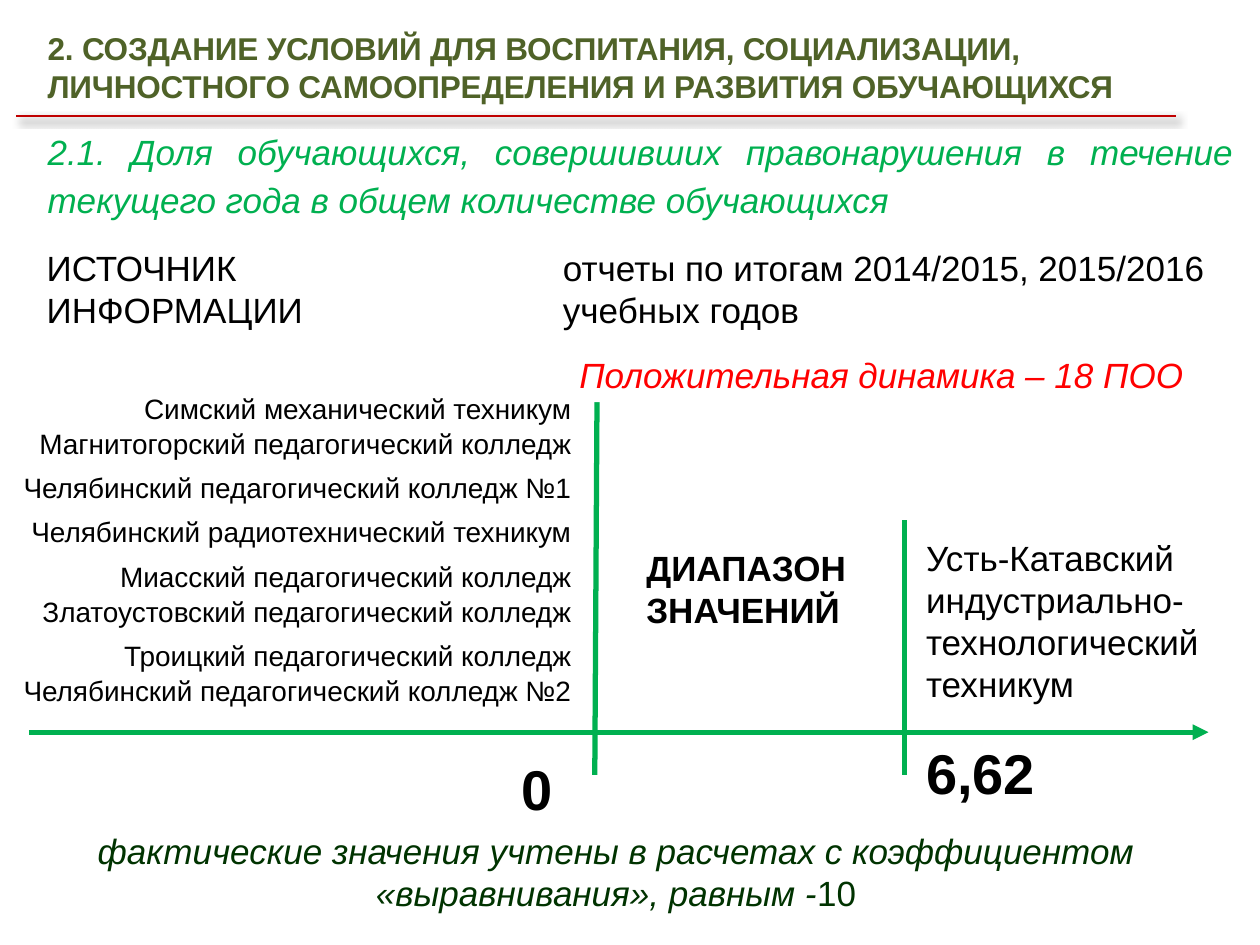
from dataclasses import dataclass

import pptx
import pptx.dml.color
import pptx.enum.shapes
import pptx.enum.text
import pptx.oxml
import pptx.oxml.ns
import pptx.util
from pptx.util import Cm

FONT = "Arial"
BLACK, GREEN, RED = "000000", "00B050", "FF0000"
DEEP_RED, OLIVE, DARK_GREEN, WHITE = "C00000", "4F6228", "003300", "FFFFFF"
ALIGN = pptx.enum.text.PP_ALIGN
DRAWING_NS = pptx.oxml.ns.nsdecls("a")

SHORT_ROW, TALL_ROW = 0.46, 0.89
AXIS_Y, TICK_BOTTOM = 14.76, 15.62
MAXIMUM_TEXT_LEFT = 18.42


@dataclass
class Label:
    """A text with its box in centimetres."""
    text: str
    left: float
    top: float
    width: float
    height: float
    size: int = 20
    color: str = BLACK
    bold: bool = False
    italic: bool = False
    align: ALIGN = ALIGN.LEFT
    wrap: bool = True
    line_spacing: float = 1.0
    fill: str = ""


@dataclass
class Line:
    """A straight line with its ends in centimetres."""
    start_x: float
    start_y: float
    end_x: float
    end_y: float
    color: str = GREEN
    width: float = 3
    arrow: bool = False
    shadow: bool = False


@dataclass
class College:
    name: str
    row_height: float = TALL_ROW


TITLE = Label(
    "2. СОЗДАНИЕ УСЛОВИЙ ДЛЯ ВОСПИТАНИЯ, СОЦИАЛИЗАЦИИ, "
    "ЛИЧНОСТНОГО САМООПРЕДЕЛЕНИЯ И РАЗВИТИЯ ОБУЧАЮЩИХСЯ",
    0.71, 0.46, 22.81, 1.8, size=18, color=OLIVE, bold=True)
NOTE = Label(
    "фактические значения учтены в расчетах с коэффициентом "
    "«выравнивания», равным -",
    -0.28, 16.59, 25.4, 1.96, color=DARK_GREEN, italic=True, align=ALIGN.CENTER)
LABELS = [
    Label("2.1. Доля обучающихся, совершивших правонарушения в течение "
          "текущего года в общем количестве обучающихся",
          0.71, 2.38, 24.41, 2.27, color=GREEN, italic=True,
          align=ALIGN.JUSTIFY, line_spacing=1.15),
    Label("отчеты по итогам 2014/2015, 2015/2016 учебных годов",
          11.1, 4.85, 13.59, 1.96),
    Label("ИСТОЧНИК ИНФОРМАЦИИ", 0.69, 4.85, 6.32, 1.96),
    Label("0", 10.26, 15.09, 1.14, 1.63, size=32, bold=True, wrap=False),
    Label("Усть-Катавский индустриально-технологический техникум",
          MAXIMUM_TEXT_LEFT, 10.69, 6.15, 3.68),
    Label("6,62", MAXIMUM_TEXT_LEFT, AXIS_Y, 2.72, 1.63, size=32, bold=True,
          wrap=False),
    Label("ДИАПАЗОН ЗНАЧЕНИЙ", 12.78, 10.9, 5.46, 1.96, bold=True),
]
DYNAMICS = Label("Положительная динамика – 18 ПОО", 11.05, 6.99, 13.44, 1.12,
                 color=RED, italic=True, align=ALIGN.CENTER, fill=WHITE)

TITLE_RULE = Line(0.33, 2.34, 23.7, 2.34, DEEP_RED, 1.5, shadow=True)
SCALE_LINES = [
    Line(12.04, 7.19, 11.99, TICK_BOTTOM),
    Line(18.24, 10.49, 18.24, TICK_BOTTOM),
    Line(0.58, AXIS_Y, 24.36, AXIS_Y, arrow=True),
]

COLLEGES = [
    College("Симский механический техникум", SHORT_ROW),
    College("Магнитогорский педагогический колледж"),
    College("Челябинский педагогический колледж №1"),
    College("Челябинский радиотехнический техникум"),
    College("Миасский педагогический колледж", SHORT_ROW),
    College("Златоустовский педагогический колледж"),
    College("Троицкий педагогический колледж", SHORT_ROW),
    College("Челябинский педагогический колледж №2"),
]


def rgb(color: str) -> pptx.dml.color.RGBColor:
    return pptx.dml.color.RGBColor.from_string(color)


def format_run(run, size: int, color: str, bold=False, italic=False) -> None:
    font = run.font
    font.name, font.size = FONT, pptx.util.Pt(size)
    font.bold, font.italic = bold, italic
    font.color.rgb = rgb(color)


def add_label(slide, label: Label):
    """Draw the label and return its paragraph."""
    box = [Cm(value) for value in
           (label.left, label.top, label.width, label.height)]
    if label.fill:
        shape = slide.shapes.add_shape(
            pptx.enum.shapes.MSO_SHAPE.RECTANGLE, *box)
        shape.shadow.inherit = False
        shape.fill.solid()
        shape.fill.fore_color.rgb = rgb(label.fill)
        shape.line.fill.background()
    else:
        shape = slide.shapes.add_textbox(*box)
    text_frame = shape.text_frame
    text_frame.text = label.text
    text_frame.word_wrap = label.wrap
    text_frame.auto_size = pptx.enum.text.MSO_AUTO_SIZE.SHAPE_TO_FIT_TEXT
    paragraph = text_frame.paragraphs[0]
    paragraph.alignment = label.align
    paragraph.line_spacing = label.line_spacing
    format_run(paragraph.runs[0], label.size, label.color, label.bold,
               label.italic)
    return paragraph


def add_line(slide, line: Line) -> None:
    connector = slide.shapes.add_connector(
        pptx.enum.shapes.MSO_CONNECTOR.STRAIGHT, Cm(line.start_x),
        Cm(line.start_y), Cm(line.end_x), Cm(line.end_y))
    connector.line.color.rgb = rgb(line.color)
    connector.line.width = pptx.util.Pt(line.width)
    if line.arrow:
        connector.line._get_or_add_ln().append(pptx.oxml.parse_xml(
            f'<a:tailEnd {DRAWING_NS} type="triangle"/>'))
    shadow = (
        '<a:outerShdw blurRad="50800" dist="38100" dir="2700000" algn="tl">'
        '<a:srgbClr val="000000"><a:alpha val="40000"/></a:srgbClr>'
        '</a:outerShdw>') if line.shadow else ""
    connector._element.spPr.append(pptx.oxml.parse_xml(
        f"<a:effectLst {DRAWING_NS}>{shadow}</a:effectLst>"))


def add_college_table(slide, colleges: list[College]) -> None:
    height = sum(college.row_height for college in colleges)
    table = slide.shapes.add_table(len(colleges), 1, Cm(-1.02), Cm(7.92),
                                   Cm(12.57), Cm(height)).table
    table.first_row = table.horz_banding = False
    for row, college in zip(table.rows, colleges):
        row.height = Cm(college.row_height)
        cell = row.cells[0]
        cell.fill.background()
        cell.margin_left = cell.margin_right = cell.margin_top = Cm(0.03)
        cell.margin_bottom = 0
        cell.text_frame.text = college.name
        paragraph = cell.text_frame.paragraphs[0]
        paragraph.alignment = ALIGN.RIGHT
        format_run(paragraph.runs[0], 16, BLACK)


def main() -> None:
    presentation = pptx.Presentation()
    presentation.slide_width, presentation.slide_height = Cm(25.4), Cm(19.05)
    slide = presentation.slides.add_slide(presentation.slide_layouts[6])

    add_line(slide, TITLE_RULE)
    title = add_label(slide, TITLE)
    title.runs[0].font._element.set("spc", "-10")
    for label in LABELS:
        add_label(slide, label)
    coefficient = add_label(slide, NOTE).add_run()
    coefficient.text = "10"
    format_run(coefficient, NOTE.size, NOTE.color)
    for line in SCALE_LINES:
        add_line(slide, line)
    add_college_table(slide, COLLEGES)
    add_label(slide, DYNAMICS)

    presentation.save("out.pptx")


if __name__ == "__main__":
    main()
